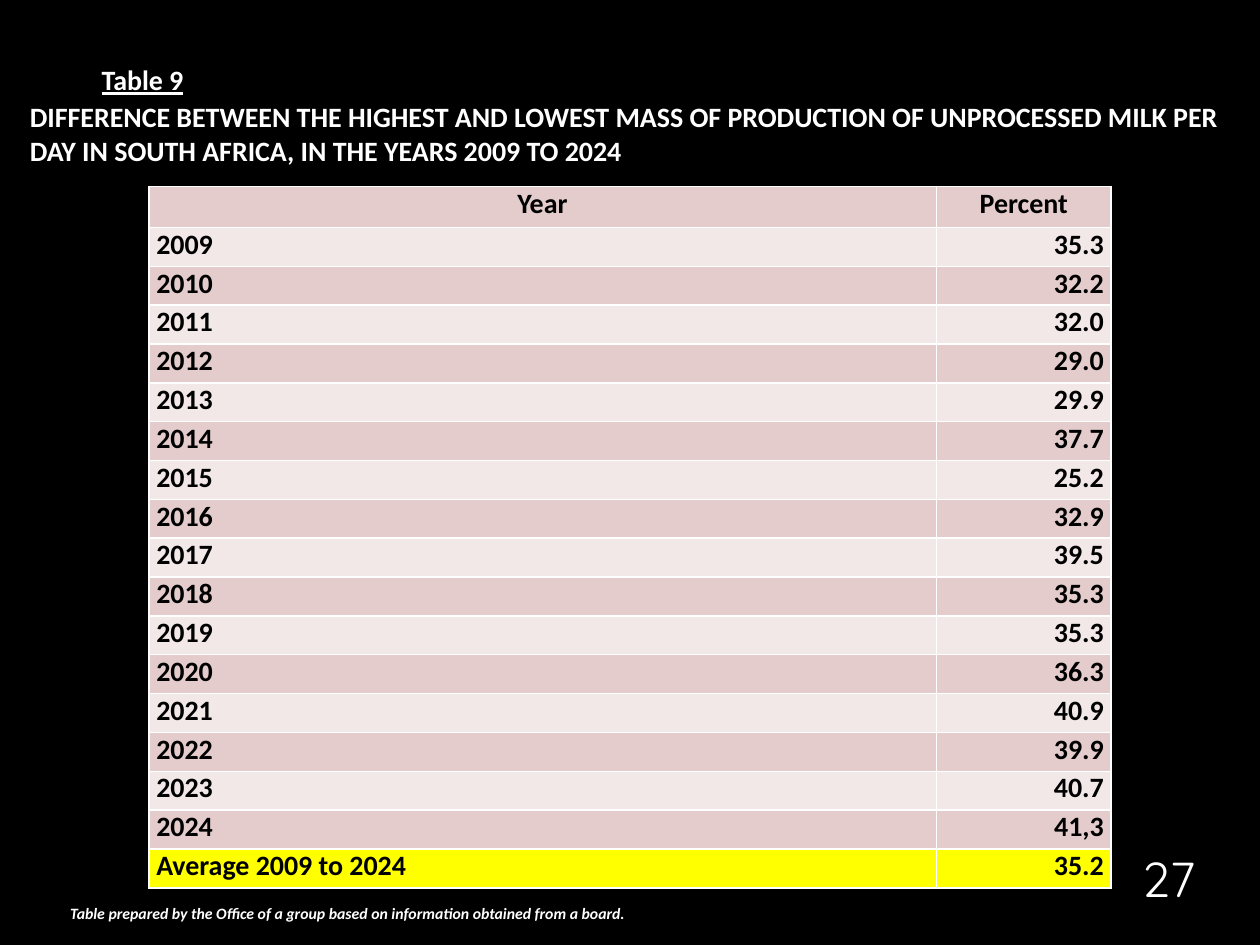
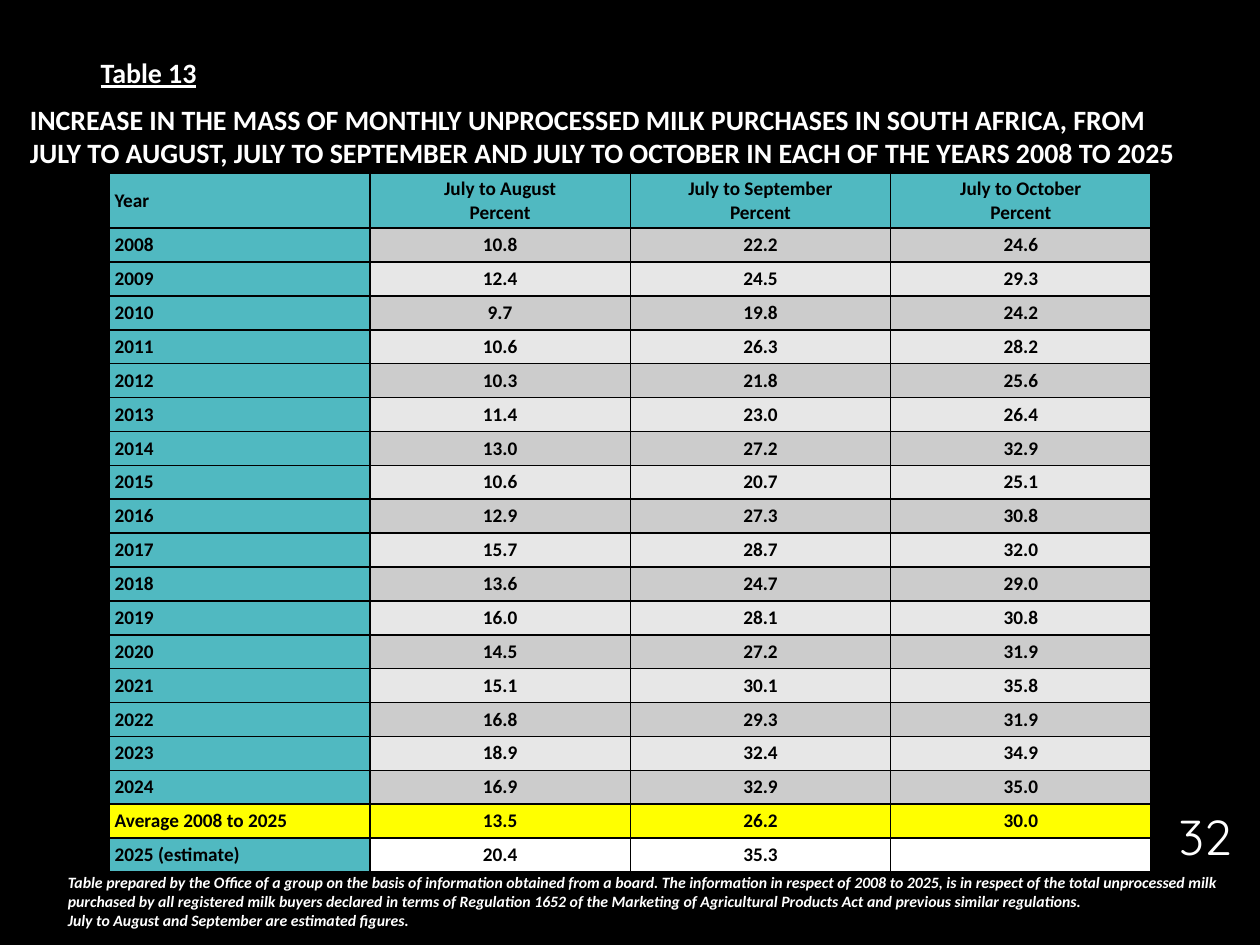
from lxml import etree
from pptx import Presentation
from pptx.dml.color import RGBColor
from pptx.enum.text import MSO_ANCHOR, PP_ALIGN
from pptx.oxml.ns import qn
from pptx.util import Pt

LEFT, MID, RIGHT = PP_ALIGN.LEFT, PP_ALIGN.CENTER, PP_ALIGN.RIGHT
TOP, CENTER, BASE = MSO_ANCHOR.TOP, MSO_ANCHOR.MIDDLE, MSO_ANCHOR.BOTTOM
BLACK, WHITE, YELLOW = "000000", "FFFFFF", "FFFF00"
ROSE, BLUSH = "E4CCCC", "F2E8E7"
TEAL, GREY, PALE = "50B9C1", "CCCCCC", "E7E7E7"
BODY, DIGITS = "Calibri", "Quicksand"

SPREAD = """35.3 32.2 32.0 29.0 29.9 37.7 25.2 32.9
39.5 35.3 35.3 36.3 40.9 39.9 40.7 41,3""".split()
GROWTH = """10.8 22.2 24.6
12.4 24.5 29.3
9.7 19.8 24.2
10.6 26.3 28.2
10.3 21.8 25.6
11.4 23.0 26.4
13.0 27.2 32.9
10.6 20.7 25.1
12.9 27.3 30.8
15.7 28.7 32.0
13.6 24.7 29.0
16.0 28.1 30.8
14.5 27.2 31.9
15.1 30.1 35.8
16.8 29.3 31.9
18.9 32.4 34.9
16.9 32.9 35.0""".splitlines()


def color(code):
    """Turn a hex string into a colour."""
    return RGBColor.from_string(code)


def paint(target, code):
    """Give a cell or background a solid fill."""
    target.fill.solid()
    target.fill.fore_color.rgb = color(code)


def write(frame, text, size=16, ink=WHITE, font=BODY, bold=True,
          italic=False, under=False, align=LEFT):
    """Write text into a frame, one paragraph per line."""
    for i, line in enumerate(text.split("\n")):
        para = frame.paragraphs[0] if i == 0 else frame.add_paragraph()
        para.alignment = align
        if not line:
            etree.SubElement(para._p, qn("a:endParaRPr"), sz=str(size * 100))
            continue
        run = para.add_run()
        run.text = line
        face = run.font
        face.name, face.size, face.color.rgb = font, Pt(size), color(ink)
        face.bold, face.italic, face.underline = bold, italic, under


def label(slide, box, text, anchor=CENTER, **style):
    """Add a wrapped text box."""
    frame = slide.shapes.add_textbox(*map(Pt, box)).text_frame
    frame.word_wrap = True
    frame.vertical_anchor = anchor
    write(frame, text, **style)


def edge(cell, code):
    """Draw one-point borders on all sides of a cell."""
    props = cell._tc.get_or_add_tcPr()
    for i, side in enumerate(("lnL", "lnR", "lnT", "lnB")):
        line = etree.Element(qn(f"a:{side}"), w=str(Pt(1)))
        fill = etree.SubElement(line, qn("a:solidFill"))
        etree.SubElement(fill, qn("a:srgbClr"), val=code)
        props.insert(i, line)


def grid(slide, spot, widths, head, step, rows, look, line, size, anchor):
    """Add a table; look gives fill, alignment and side inset of a cell."""
    high = head + step * (len(rows) - 1)
    box = (*spot, sum(widths), high)
    table = slide.shapes.add_table(
        len(rows), len(widths), *map(Pt, box)).table
    for col, width in zip(table.columns, widths):
        col.width = Pt(width)
    for r, texts in enumerate(rows):
        table.rows[r].height = Pt(step if r else head)
        for c, text in enumerate(texts):
            cell = table.cell(r, c)
            fill, align, inset = look(r, c)
            cell.margin_left = cell.margin_right = Pt(inset)
            cell.margin_top = cell.margin_bottom = 0
            cell.vertical_anchor = anchor
            paint(cell, fill)
            edge(cell, line)
            write(cell.text_frame, text, size=size, ink=BLACK, align=align)


def page(deck, name, title, note, number):
    """Add a black slide; each part is a box and its text."""
    slide = deck.slides.add_slide(deck.slide_layouts[6])
    paint(slide.background, BLACK)
    label(slide, *note, size=9, italic=True)
    label(slide, *name, anchor=TOP, under=True)
    label(slide, *title)
    label(slide, *number, anchor=BASE, size=28, font=DIGITS, bold=False,
          align=MID)
    return slide


def spread(deck):
    """Build the slide on the daily production gap."""
    slide = page(
        deck,
        ((51, 32.4, 83.5, 26.6), "Table 9"),
        ((10, 53.3, 700, 46), "DIFFERENCE BETWEEN THE HIGHEST AND LOWEST MASS "
         "OF PRODUCTION OF UNPROCESSED MILK PER DAY IN SOUTH AFRICA, "
         "IN THE YEARS 2009 TO 2024"),
        ((33, 512.6, 533.5, 18), "Table prepared by the Office of a group "
         "based on information obtained from a board."),
        ((643, 461.5, 49.7, 60.5), "27"))
    rows = [("Year", "Percent")]
    rows += [(str(2009 + i), value) for i, value in enumerate(SPREAD)]
    rows.append(("Average 2009 to 2024", "35.2"))

    def look(r, c):
        """Band the rows and mark the average."""
        fill = YELLOW if r == len(rows) - 1 else (ROSE, BLUSH)[r % 2]
        return fill, MID if r == 0 else (LEFT, RIGHT)[c], 4.3

    grid(slide, (85, 106.5), (450, 100), 23.5, 22.2, rows, look, WHITE, 16,
         TOP)


def growth(deck):
    """Build the slide on the rise in monthly purchases."""
    slide = page(
        deck,
        ((50.4, 28.3, 101.5, 26.6), "Table 13"),
        ((10, 54.7, 700, 46), "INCREASE IN THE MASS OF MONTHLY UNPROCESSED "
         "MILK PURCHASES IN SOUTH AFRICA, FROM\nJULY TO AUGUST, JULY TO "
         "SEPTEMBER AND JULY TO OCTOBER IN EACH OF THE YEARS 2008 TO 2025"),
        ((31.7, 494.8, 678.3, 40), "Table prepared by the Office of a group on "
         "the basis of information obtained from a board. The information in "
         "respect of 2008 to 2025, is in respect of the total unprocessed "
         "milk purchased by all registered milk buyers declared in terms of "
         "Regulation 1652 of the Marketing of Agricultural Products Act and "
         "previous similar regulations.\n"
         "July to August and September are estimated figures."),
        ((663.8, 437.8, 49.7, 60.5), "32"))
    months = ("August", "September", "October")
    rows = [("Year", *(f"July to {month}\nPercent" for month in months))]
    rows += [(str(2008 + i), *line.split()) for i, line in enumerate(GROWTH)]
    rows.append(("Average 2008 to 2025", "13.5", "26.2", "30.0"))
    rows.append(("2025 (estimate)", "20.4", "35.3", ""))
    last = len(rows) - 1

    def look(r, c):
        """Color the heads, bands, average and estimate."""
        if r == last - 1:
            fill = YELLOW
        elif r == 0 or c == 0:
            fill = TEAL
        else:
            fill = WHITE if r == last else (PALE, GREY)[r % 2]
        return fill, MID if c else LEFT, 5 if r and c else 2.9

    grid(slide, (62.6, 98.9), (148.8,) * 4, 31.5, 19.37, rows, look, BLACK, 11,
         CENTER)


def main():
    """Build and save the deck."""
    deck = Presentation()
    deck.slide_width, deck.slide_height = Pt(720), Pt(540)
    spread(deck)
    growth(deck)
    deck.save("out.pptx")


if __name__ == "__main__":
    main()
